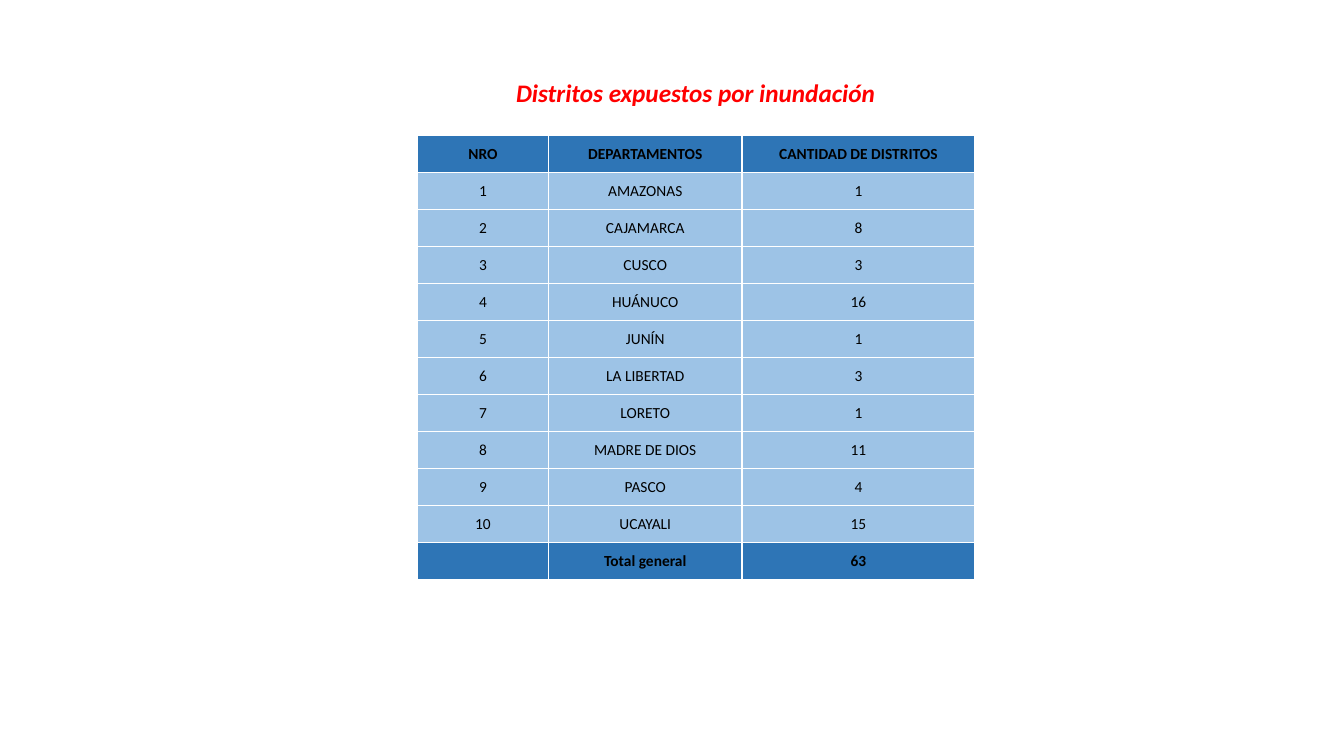
"""Build a slide with a table of districts exposed to flooding."""
import lxml.etree
import pptx
import pptx.dml.color
import pptx.enum.text
import pptx.oxml.ns
import pptx.util

Inches = pptx.util.Inches
COLORS = {"title": "FF0000", "text": "000000", "band": "2E75B6", "body": "9DC3E6", "border": "FFFFFF"}
HEADINGS = ["NRO", "DEPARTAMENTOS", "CANTIDAD DE DISTRITOS"]
DISTRICTS = {
    "AMAZONAS": 1,
    "CAJAMARCA": 8,
    "CUSCO": 3,
    "HUÁNUCO": 16,
    "JUNÍN": 1,
    "LA LIBERTAD": 3,
    "LORETO": 1,
    "MADRE DE DIOS": 11,
    "PASCO": 4,
    "UCAYALI": 15,
}
COLUMN_WIDTHS = [1.3, 1.92, 2.31]
ROW_HEIGHT = 0.3675
CELL_FORMAT = {
    "margin_left": Inches(0.01),
    "margin_right": Inches(0.01),
    "margin_top": Inches(0.01),
    "margin_bottom": 0,
    "vertical_anchor": pptx.enum.text.MSO_ANCHOR.MIDDLE,
}


def write_text(para, text, color, **font_format):
    """Add a centred Calibri run to a paragraph."""
    para.alignment = pptx.enum.text.PP_ALIGN.CENTER
    span = para.add_run()
    span.text = text
    span.font.name = "Calibri"
    span.font.color.rgb = pptx.dml.color.RGBColor.from_string(COLORS[color])
    for name, value in font_format.items():
        setattr(span.font, name, value)


def add_borders(cell):
    """Draw a thin line on each side of a table cell."""
    properties = cell._tc.get_or_add_tcPr()
    for side in ("lnL", "lnR", "lnT", "lnB"):
        line = lxml.etree.SubElement(properties, pptx.oxml.ns.qn(f"a:{side}"), w=str(pptx.util.Pt(1)))
        fill = lxml.etree.SubElement(line, pptx.oxml.ns.qn("a:solidFill"))
        lxml.etree.SubElement(fill, pptx.oxml.ns.qn("a:srgbClr"), val=COLORS["border"])


deck = pptx.Presentation()
deck.slide_width = Inches(13.33)
deck.slide_height = Inches(7.5)
page = deck.slides.add_slide(deck.slide_layouts[6])

title_box = page.shapes.add_textbox(Inches(5), Inches(0.72), Inches(3.8), Inches(0.4))
title_box.text_frame.word_wrap = False
title_box.text_frame.auto_size = pptx.enum.text.MSO_AUTO_SIZE.SHAPE_TO_FIT_TEXT
write_text(title_box.text_frame.paragraphs[0], "Distritos expuestos por inundación", "title",
           size=pptx.util.Pt(18), bold=True, italic=True)

rows = [HEADINGS]
for number, (department, count) in enumerate(DISTRICTS.items(), start=1):
    rows.append([str(number), department, str(count)])
rows.append(["", "Total general", str(sum(DISTRICTS.values()))])

table = page.shapes.add_table(
    len(rows), len(HEADINGS), Inches(4.14), Inches(1.34),
    Inches(sum(COLUMN_WIDTHS)), Inches(ROW_HEIGHT * len(rows)),
).table
for column, width in zip(table.columns, COLUMN_WIDTHS):
    column.width = Inches(width)

for row_index, texts in enumerate(rows):
    table.rows[row_index].height = Inches(ROW_HEIGHT)
    is_band = row_index in (0, len(rows) - 1)
    for column_index, text in enumerate(texts):
        cell = table.cell(row_index, column_index)
        for name, value in CELL_FORMAT.items():
            setattr(cell, name, value)
        add_borders(cell)
        cell.fill.solid()
        cell.fill.fore_color.rgb = pptx.dml.color.RGBColor.from_string(COLORS["band" if is_band else "body"])
        if text:
            write_text(cell.text_frame.paragraphs[0], text, "text", size=pptx.util.Pt(11), bold=is_band)

deck.save("out.pptx")
